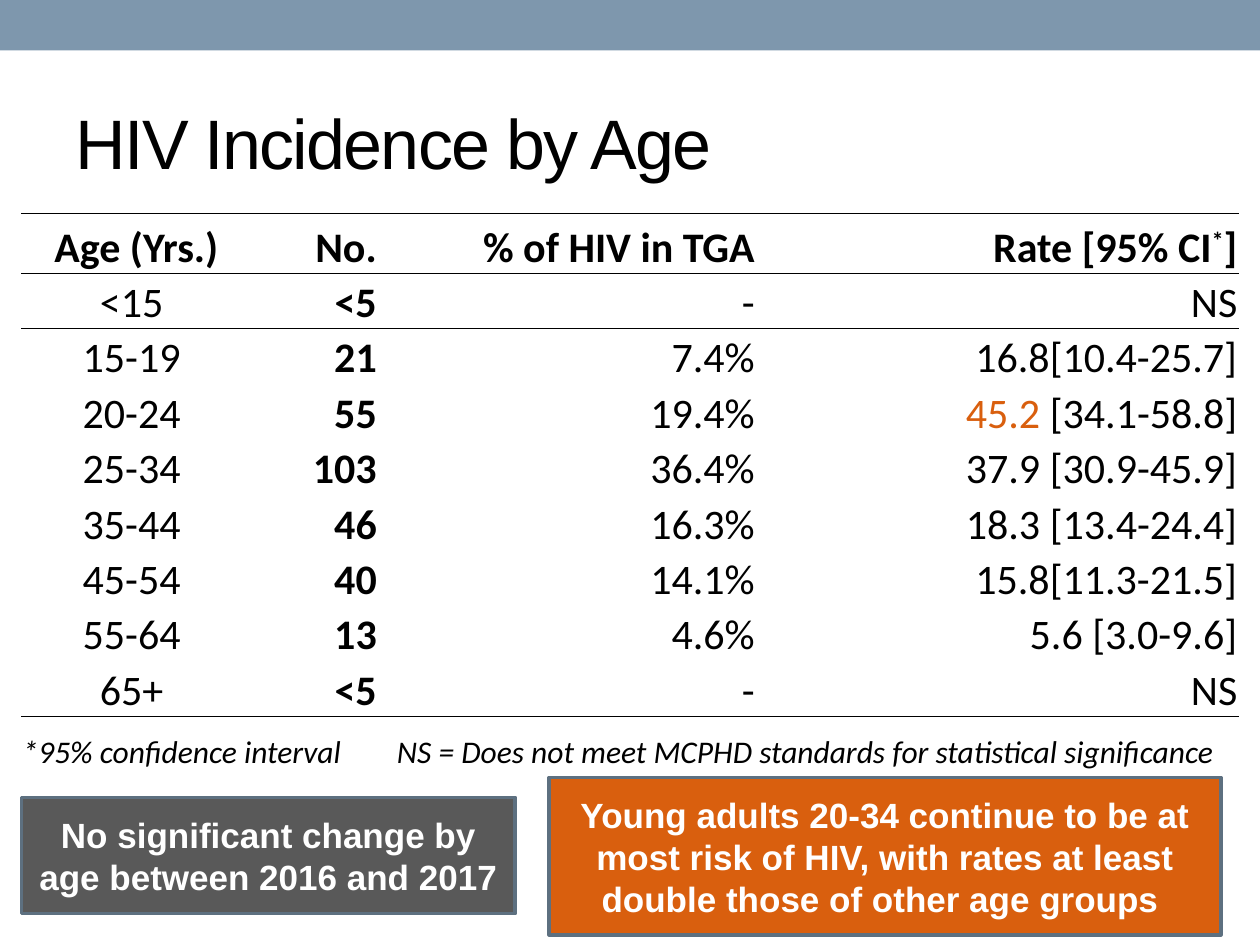
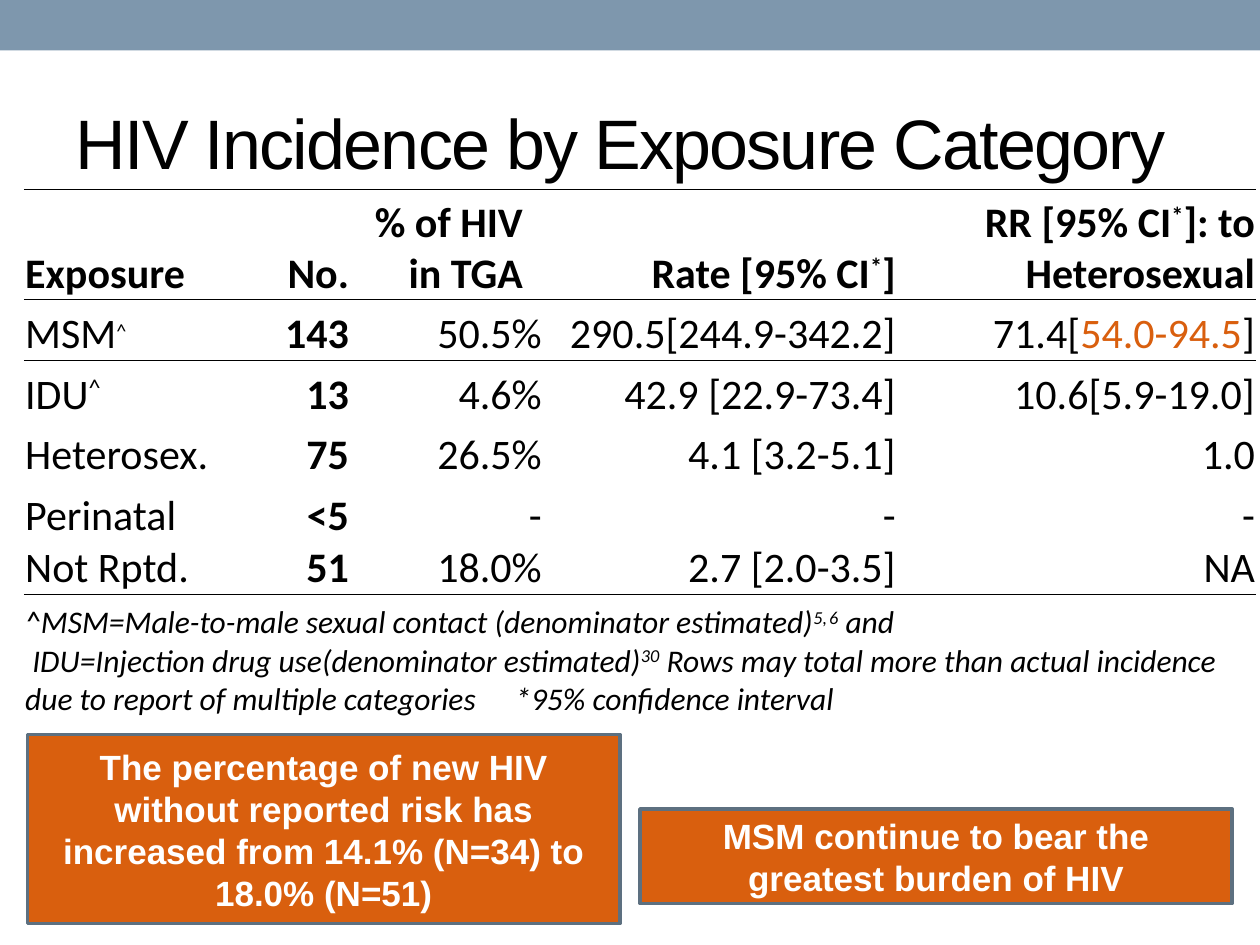
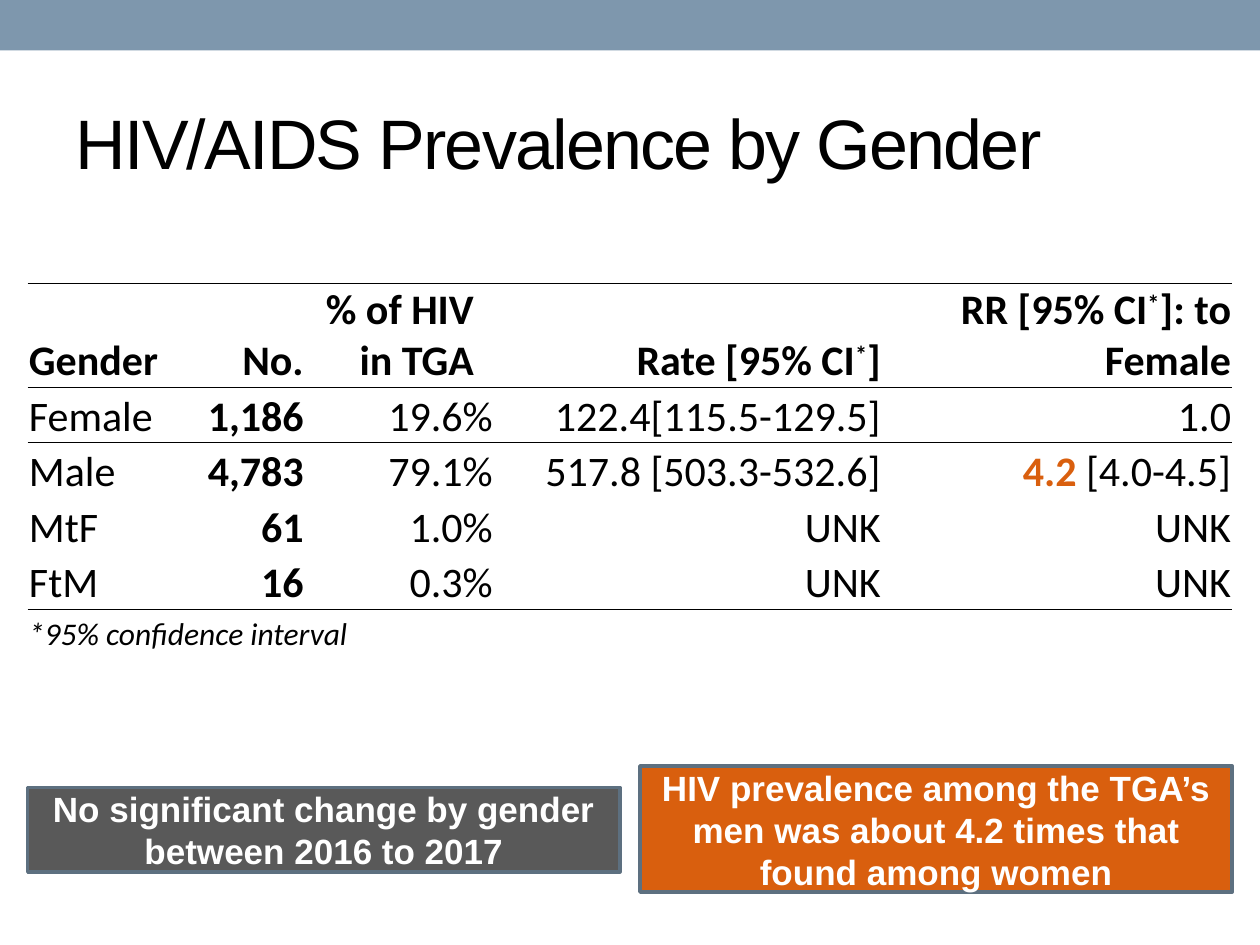
from lxml import etree
from pptx import Presentation
from pptx.dml.color import RGBColor
from pptx.enum.shapes import MSO_SHAPE
from pptx.enum.text import MSO_ANCHOR, PP_ALIGN
from pptx.oxml.ns import qn
from pptx.util import Pt

RECTANGLE = MSO_SHAPE.RECTANGLE
MIDDLE, BOTTOM = MSO_ANCHOR.MIDDLE, MSO_ANCHOR.BOTTOM
LEFT, CENTER, RIGHT = PP_ALIGN.LEFT, PP_ALIGN.CENTER, PP_ALIGN.RIGHT
EMU_PER_PX = 9144  # 100 px to the inch
TITLE_ONLY = 5
PLAIN_TABLE = "{2D5ABB26-0587-4C30-8999-92F81FD0307C}"
COLORS = {"band": "7E97AD", "text": "000000", "accent": "D95F0E",
          "gray": "595959", "outline": "5D7080", "white": "FFFFFF"}


def px(length):
    return length * EMU_PER_PX


def rgb(name):
    return RGBColor.from_string(COLORS[name])


def raised(text, **style):
    return text, {"raised": True, **style}


def accent(text, **style):
    return text, {"color": "accent", **style}


def format_run(run, font="Calibri", size=24, color="text", bold=False,
               italic=False, raised=False):
    run.font.name, run.font.size = font, Pt(size)
    run.font.bold, run.font.italic = bold, italic
    run.font.color.rgb = rgb(color)
    if raised:
        run.font._element.set("baseline", "30000")


def write_spans(para, spans, **style):
    """Fill a paragraph from a string or a list of strings and (text, style) pairs."""
    for span in [spans] if isinstance(spans, str) else spans:
        text, own_style = (span, {}) if isinstance(span, str) else span
        run = para.add_run()
        run.text = text
        format_run(run, **{**style, **own_style})


def set_border(cell, side, points):
    line = etree.SubElement(cell._tc.get_or_add_tcPr(), qn(f"a:{side}"), w=str(Pt(points)))
    fill = etree.SubElement(line, qn("a:solidFill"))
    etree.SubElement(fill, qn("a:srgbClr"), val=COLORS["text"])


def set_tab_stop(para, position):
    stops = etree.SubElement(para._p.get_or_add_pPr(), qn("a:tabLst"))
    etree.SubElement(stops, qn("a:tab"), pos=str(px(position)), algn="l")


class Report:
    def __init__(self):
        self.deck = Presentation()
        self.deck.slide_width, self.deck.slide_height = px(1000), px(750)
        self.slide = None

    def start_slide(self, title):
        self.slide = self.deck.slides.add_slide(self.deck.slide_layouts[TITLE_ONLY])
        self.rectangle(0, 0, 1000, 40, "band")
        box = self.slide.shapes.title
        box.left, box.top, box.width, box.height = map(px, (50, 58, 900, 108))
        box.text_frame.text = title
        box.text_frame.vertical_anchor = MIDDLE
        para = box.text_frame.paragraphs[0]
        para.alignment = LEFT
        format_run(para.runs[0], "Arial", 40)
        para.runs[0].font._element.set("spc", "-100")

    def rectangle(self, left, top, width, height, fill):
        box = self.slide.shapes.add_shape(RECTANGLE, *map(px, (left, top, width, height)))
        box.shadow.inherit = False
        box.fill.solid()
        box.fill.fore_color.rgb = rgb(fill)
        box.line.fill.background()
        return box

    def callout(self, left, top, width, height, text, fill="accent"):
        box = self.rectangle(left, top, width, height, fill)
        box.line.color.rgb = rgb("outline")
        box.line.width = Pt(2.08)
        frame = box.text_frame
        frame.word_wrap, frame.vertical_anchor = True, MIDDLE
        frame.text = text
        frame.paragraphs[0].alignment = CENTER
        format_run(frame.paragraphs[0].runs[0], "Arial", 20, "white", bold=True)

    def cell(self, cell, paragraphs, alignment, **style):
        cell.margin_left = cell.margin_right = cell.margin_top = px(1)
        cell.margin_bottom = 0
        cell.vertical_anchor = BOTTOM
        cell.fill.background()
        for index, spans in enumerate(paragraphs):
            frame = cell.text_frame
            para = frame.add_paragraph() if index else frame.paragraphs[0]
            para.alignment = alignment
            write_spans(para, spans, **style)

    def table(self, left, top, columns, heights, rows, notes,
              first_alignment=LEFT, end_line=0.5, note_tab=None):
        """Draw a ruled table whose last row is a note across all columns."""
        last = len(heights) - 1
        table = self.slide.shapes.add_table(
            len(heights), len(columns),
            *map(px, (left, top, sum(columns), sum(heights)))).table
        table.first_row = table.horz_banding = False
        table._tbl.tblPr.find(qn("a:tableStyleId")).text = PLAIN_TABLE
        for column, width in zip(table.columns, columns):
            column.width = px(width)
        for row, height in zip(table.rows, heights):
            row.height = px(height)

        for row_index in range(len(heights)):
            for column_index in range(len(columns)):
                cell = table.cell(row_index, column_index)
                if row_index in (0, 1, last):
                    set_border(cell, "lnT", end_line if row_index == last else 0.5)
                if row_index in (0, last - 1):
                    set_border(cell, "lnB", end_line if row_index else 0.5)
                if row_index < last:
                    content = rows[row_index][column_index]
                    paragraphs = content if isinstance(content, tuple) else (content,)
                    self.cell(cell, paragraphs, RIGHT if column_index else first_alignment,
                              bold=row_index == 0 or column_index == 1)

        note = table.cell(last, 0)
        note.merge(table.cell(last, len(columns) - 1))
        self.cell(note, notes, LEFT, size=18, italic=True)
        if note_tab:
            set_tab_stop(note.text_frame.paragraphs[-1], note_tab)
        return table

    def comparison_table(self, *place, group, reference, rows, **options):
        """Draw a table of rates with risk ratios against a reference group."""
        header = [group, "No.", ("% of HIV", "in TGA"), RATE_HEADER,
                  ["RR [95% CI", STAR, f"]: to {reference}"]]
        table = self.table(*place, [header, *rows], **options)
        share = table.cell(0, 2).text_frame.paragraphs[0]
        share._p.get_or_add_pPr().set("marR", str(px(15)))


STAR = raised("*")
RATE_HEADER = ["Rate [95% CI", STAR, "]"]
INTERVAL_NOTE = "*95% confidence interval"


def add_age_slide(report):
    report.start_slide("HIV Incidence by Age")
    rows = [
        [" Age (Yrs.)", "No.", "% of HIV in TGA", RATE_HEADER],
        ["<15", "<5", "-", "NS"],
        ["15-19", "21", "7.4%", "16.8[10.4-25.7]"],
        ["20-24", "55", "19.4%", [accent("45.2"), " [34.1-58.8]"]],
        ["25-34", "103", "36.4%", "37.9 [30.9-45.9]"],
        ["35-44", "46", "16.3%", "18.3 [13.4-24.4]"],
        ["45-54", "40", "14.1%", "15.8[11.3-21.5]"],
        ["55-64", "13", "4.6%", "5.6 [3.0-9.6]"],
        ["65+", "<5", "-", "NS"],
    ]
    note = f"{INTERVAL_NOTE}\tNS = Does not meet MCPHD standards for statistical significance"
    report.table(17, 169, [175, 108, 300, 383], [48] + [44] * 9, rows, [note],
                 first_alignment=CENTER, end_line=1, note_tab=297)
    report.callout(17, 633, 392, 92,
                   "No significant change by age between 2016 and 2017", "gray")
    report.callout(436, 617, 533, 125,
                   "Young adults 20-34 continue to be at most risk of HIV, "
                   "with rates at least double those of other age groups ")


def add_exposure_slide(report):
    report.start_slide("HIV Incidence by Exposure Category")
    rows = [
        [["MSM", raised("^", size=20)], "143", "50.5%", "290.5[244.9-342.2]",
         ["71.4[", accent("54.0-94.5"), "]"]],
        [["IDU", raised("^")], "13", "4.6%", "42.9 [22.9-73.4]", "10.6[5.9-19.0]"],
        ["Heterosex.", "75", "26.5%", "4.1 [3.2-5.1]", "1.0"],
        ["Perinatal", "<5", "-", "-", "-"],
        ["Not Rptd.", "51", "18.0%", "2.7 [2.0-3.5]", "NA"],
    ]
    notes = [
        ["^MSM=Male-to-male sexual contact (denominator estimated)",
         raised("5,"), raised(" ", size=8), raised("6"), " and"],
        [" IDU=Injection drug use(denominator estimated)", raised("30"),
         " Rows may total more than actual incidence due to report of multiple "
         f"categories\t{INTERVAL_NOTE}"],
    ]
    report.comparison_table(19, 150, [157, 102, 153, 281, 285],
                            [88] + [48] * 4 + [22, 99], group="Exposure",
                            reference="Heterosexual", rows=rows, notes=notes, note_tab=389)
    report.callout(22, 583, 470, 150,
                   "The percentage of new HIV without reported risk has "
                   "increased from 14.1% (N=34) to 18.0% (N=51)")
    report.callout(508, 642, 470, 75, "MSM continue to bear the greatest burden of HIV")


def add_gender_slide(report):
    report.start_slide("HIV/AIDS Prevalence by Gender")
    rows = [
        ["Female", "1,186", "19.6%", "122.4[115.5-129.5]", "1.0"],
        ["Male", "4,783", "79.1%", "517.8 [503.3-532.6]",
         [accent("4.2", bold=True), " [4.0-4.5]"]],
        ["MtF", "61", "1.0%", "UNK", "UNK"],
        ["FtM", "16", "0.3%", "UNK", "UNK"],
    ]
    report.callout(22, 625, 470, 67,
                   "No significant change by gender between 2016 to 2017", "gray")
    report.callout(508, 608, 470, 100,
                   "HIV prevalence among the TGA’s men was about 4.2 times "
                   "that found among women")
    report.comparison_table(22, 225, [120, 100, 150, 308, 278],
                            [58] + [44] * 4 + [36], group="Gender",
                            reference="Female", rows=rows, notes=[INTERVAL_NOTE])


def main():
    report = Report()
    add_age_slide(report)
    add_exposure_slide(report)
    add_gender_slide(report)
    report.deck.save("out.pptx")


if __name__ == "__main__":
    main()
